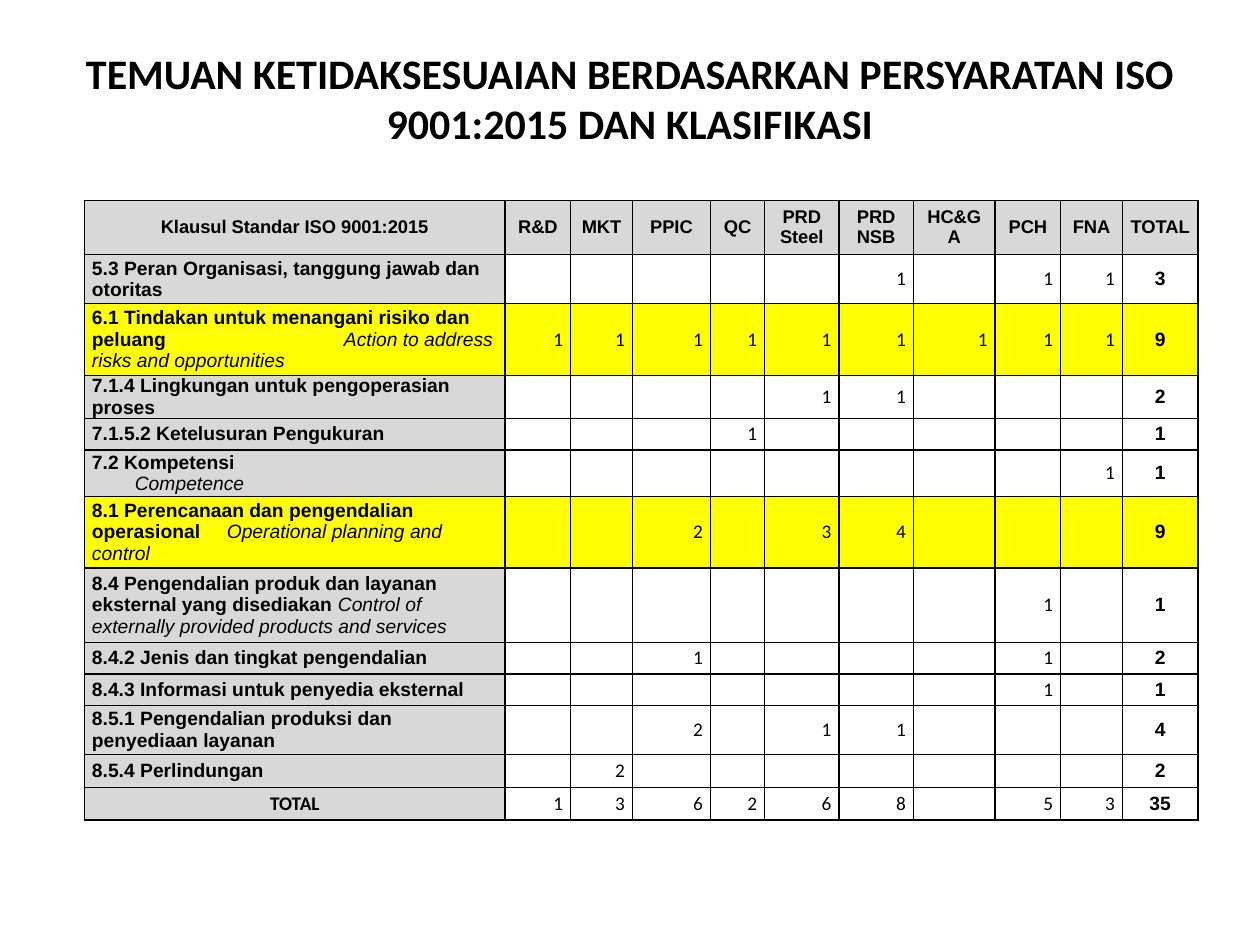
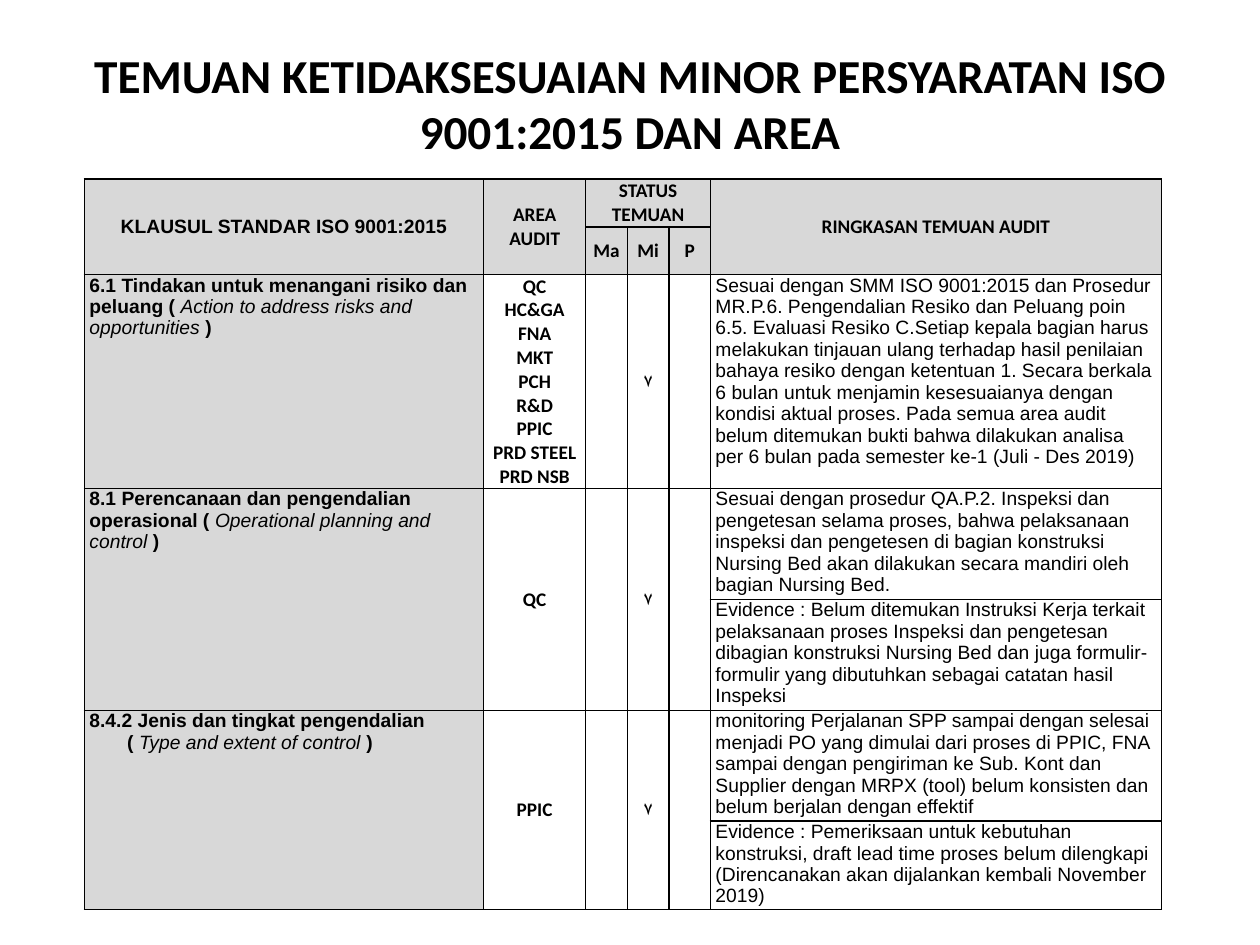
from dataclasses import dataclass
from lxml.etree import SubElement
from pptx import Presentation
from pptx.dml.color import RGBColor
from pptx.enum.text import MSO_ANCHOR, MSO_AUTO_SIZE, PP_ALIGN
from pptx.oxml.ns import qn
from pptx.util import Inches, Pt


@dataclass(frozen=True)
class Theme:
    ink: str = "000000"
    paper: str = "FFFFFF"
    label: str = "D8D8D8"
    highlight: str = "FFFF00"
    heading_font: str = "Calibri"
    body_font: str = "Arial"
    header_size: float = 10.5
    body_size: float = 11
    blank_size: float = 6
    line_width: float = 1
    plain_style: str = "{2D5ABB26-0587-4C30-8999-92F81FD0307C}"


@dataclass(frozen=True)
class Span:
    text: str
    bold: bool = False
    italic: bool = False


@dataclass(frozen=True)
class Line:
    spans: tuple
    indent: float = 0
    tab: float = 0


def bold(text):
    return Span(text, bold=True)


def italic(text):
    return Span(text, italic=True)


def line(*spans, indent=0, tab=0):
    return Line(spans, indent, tab)


class SlideBuilder:
    def __init__(self, deck, theme):
        self.deck = deck
        self.theme = theme
        self.slide = None

    def start(self):
        self.slide = self.deck.slides.add_slide(self.deck.slide_layouts[5])

    def add_spans(self, para, spans, size, font):
        for span in spans:
            run = para.add_run()
            run.text = span.text
            run.font.name = font
            run.font.size = Pt(size)
            run.font.bold = span.bold
            run.font.italic = span.italic
            run.font.color.rgb = RGBColor.from_string(self.theme.ink)

    def title(self, text, height, size):
        box = self.slide.shapes.title
        box.left, box.top = Inches(0.5), Inches(0.3)
        box.width, box.height = Inches(9), Inches(height)
        frame = box.text_frame
        frame.word_wrap = True
        frame.auto_size = MSO_AUTO_SIZE.NONE
        frame.vertical_anchor = MSO_ANCHOR.MIDDLE
        para = frame.paragraphs[0]
        para.alignment = PP_ALIGN.CENTER
        self.add_spans(para, [bold(text)], size, self.theme.heading_font)

    def table(self, left, top, widths, heights):
        frame = self.slide.shapes.add_table(
            len(heights), len(widths), Inches(left), Inches(top),
            Inches(sum(widths)), Inches(sum(heights)))
        table = frame.table
        table.first_row = table.horz_banding = False
        table._tbl.tblPr.find(qn("a:tableStyleId")).text = self.theme.plain_style
        for column, width in zip(table.columns, widths):
            column.width = Inches(width)
        for row, height in zip(table.rows, heights):
            row.height = Inches(height)
        for cell in table.iter_cells():
            cell.margin_left = cell.margin_right = 0
            cell.margin_top = cell.margin_bottom = 0
            cell.fill.background()
            SubElement(cell.text_frame.paragraphs[0]._p, qn("a:endParaRPr"),
                       sz=str(int(self.theme.blank_size * 100)))
        return table

    def paint(self, cell, fill, sides="LRTB"):
        properties = cell._tc.get_or_add_tcPr()
        cell.fill.solid()
        cell.fill.fore_color.rgb = RGBColor.from_string(fill)
        for position, side in enumerate(sides):
            border = SubElement(properties, qn(f"a:ln{side}"),
                                w=str(Pt(self.theme.line_width)))
            solid = SubElement(border, qn("a:solidFill"))
            SubElement(solid, qn("a:srgbClr"), val=self.theme.ink)
            properties.insert(position, border)

    def text(self, cell, lines, size=None, font=None, align=PP_ALIGN.LEFT,
             anchor=MSO_ANCHOR.MIDDLE, inset=0.06):
        cell.margin_left = cell.margin_right = Inches(inset)
        cell.vertical_anchor = anchor
        frame = cell.text_frame
        for index, item in enumerate(lines):
            para = frame.add_paragraph() if index else frame.paragraphs[0]
            para.alignment = align
            self.add_spans(para, item.spans, size or self.theme.body_size,
                           font or self.theme.body_font)
            properties = para._p.get_or_add_pPr()
            if item.indent:
                properties.set("marL", str(Inches(item.indent)))
                properties.set("indent", "0")
            if item.tab:
                stops = SubElement(properties, qn("a:tabLst"))
                SubElement(stops, qn("a:tab"), pos=str(Inches(item.tab)), algn="l")


DEPARTMENTS = ["R&D", "MKT", "PPIC", "QC", "PRD Steel", "PRD NSB",
               "HC&GA", "PCH", "FNA", "TOTAL"]

CLAUSES = [
    ([line(bold("5.3 Peran Organisasi, tanggung jawab dan otoritas"))],
     {"PRD NSB": 1, "PCH": 1, "FNA": 1, "TOTAL": 3}),
    ([line(bold("6.1 Tindakan untuk menangani risiko dan peluang\t"),
           italic("Action to address risks and opportunities"), tab=2)],
     dict.fromkeys(DEPARTMENTS, 1) | {"TOTAL": 9}),
    ([line(bold("7.1.4 Lingkungan untuk pengoperasian proses"))],
     {"PRD Steel": 1, "PRD NSB": 1, "TOTAL": 2}),
    ([line(bold("7.1.5.2 Ketelusuran Pengukuran"))], {"QC": 1, "TOTAL": 1}),
    ([line(bold("7.2 Kompetensi")), line(italic("Competence"), indent=0.34)],
     {"FNA": 1, "TOTAL": 1}),
    ([line(bold("8.1 Perencanaan dan pengendalian operasional\t"),
           italic("Operational planning and control"), tab=1.07)],
     {"PPIC": 2, "PRD Steel": 3, "PRD NSB": 4, "TOTAL": 9}),
    ([line(bold("8.4 Pengendalian produk dan layanan eksternal yang disediakan "),
           italic("Control of externally provided products and services"))],
     {"PCH": 1, "TOTAL": 1}),
    ([line(bold("8.4.2 Jenis dan tingkat pengendalian"))],
     {"PPIC": 1, "PCH": 1, "TOTAL": 2}),
    ([line(bold("8.4.3 Informasi untuk penyedia eksternal"))],
     {"PCH": 1, "TOTAL": 1}),
    ([line(bold("8.5.1 Pengendalian produksi dan penyediaan layanan"))],
     {"PPIC": 2, "PRD Steel": 1, "PRD NSB": 1, "TOTAL": 4}),
    ([line(bold("8.5.4 Perlindungan"))], {"MKT": 2, "TOTAL": 2}),
    ([line(bold("TOTAL"))],
     {"R&D": 1, "MKT": 3, "PPIC": 6, "QC": 2, "PRD Steel": 6, "PRD NSB": 8,
      "PCH": 5, "FNA": 3, "TOTAL": 35}),
]

FINDINGS = [
    ([line(bold("6.1 Tindakan untuk menangani risiko dan peluang ( "),
           italic("Action to address risks and opportunities"), bold(" )"))],
     ["QC", "HC&GA", "FNA", "MKT", "PCH", "R&D", "PPIC", "PRD STEEL", "PRD NSB"],
     ["Sesuai dengan SMM ISO 9001:2015 dan Prosedur MR.P.6. Pengendalian Resiko "
      "dan Peluang poin 6.5. Evaluasi Resiko C.Setiap kepala bagian harus melakukan "
      "tinjauan ulang terhadap hasil penilaian bahaya resiko dengan ketentuan 1. "
      "Secara berkala 6 bulan untuk menjamin kesesuaianya dengan kondisi aktual "
      "proses. Pada semua area audit belum ditemukan bukti bahwa dilakukan analisa "
      "per 6 bulan pada semester ke-1 (Juli - Des 2019)"]),
    ([line(bold("8.1 Perencanaan dan pengendalian operasional ( "),
           italic("Operational planning and control"), bold(" )"))],
     ["QC"],
     ["Sesuai dengan prosedur QA.P.2. Inspeksi dan pengetesan selama proses, bahwa "
      "pelaksanaan inspeksi dan pengetesen di bagian konstruksi Nursing Bed akan "
      "dilakukan secara mandiri oleh bagian Nursing Bed.",
      "Evidence : Belum ditemukan Instruksi Kerja terkait pelaksanaan proses Inspeksi "
      "dan pengetesan dibagian konstruksi Nursing Bed dan juga formulir-formulir yang "
      "dibutuhkan sebagai catatan hasil Inspeksi"]),
    ([line(bold("8.4.2 Jenis dan tingkat pengendalian")),
      line(bold("( "), italic("Type and extent of control"), bold(" )"), indent=0.3)],
     ["PPIC"],
     ["monitoring Perjalanan SPP sampai dengan selesai menjadi PO yang dimulai dari "
      "proses di PPIC, FNA sampai dengan pengiriman ke Sub. Kont dan Supplier dengan "
      "MRPX (tool) belum konsisten dan belum berjalan dengan effektif",
      "Evidence : Pemeriksaan untuk kebutuhan konstruksi, draft lead time proses belum "
      "dilengkapi (Direncanakan akan dijalankan kembali November 2019)"]),
]


def build_clause_slide(builder):
    theme = builder.theme
    builder.start()
    builder.title("TEMUAN KETIDAKSESUAIAN BERDASARKAN PERSYARATAN ISO 9001:2015 "
                  "DAN KLASIFIKASI", 0.95, 24)
    table = builder.table(
        0.67, 1.33,
        [0.44, 2.9, 0.52, 0.49, 0.62, 0.43, 0.59, 0.59, 0.65, 0.52, 0.49, 0.6],
        [0.26, 0.43, 0.39, 0.57, 0.34, 0.25, 0.37, 0.57, 0.59, 0.25, 0.25, 0.39,
         0.26, 0.26, 0.25])
    last_row = len(CLAUSES) + 1
    for row in range(1, last_row + 1):
        for column in range(12):
            fill = theme.label if row == 1 or column < 2 else theme.paper
            if row in (3, 7):
                fill = theme.highlight
            builder.paint(table.cell(row, column), fill)
        table.cell(row, 0).merge(table.cell(row, 1))

    headings = {0: "Klausul Standar ISO 9001:2015"} | dict(enumerate(DEPARTMENTS, 2))
    for column, heading in headings.items():
        builder.text(table.cell(1, column), [line(bold(heading))],
                     theme.header_size, align=PP_ALIGN.CENTER)
    for row, (clause, counts) in enumerate(CLAUSES, 2):
        is_total = row == last_row
        builder.text(table.cell(row, 0), clause,
                     font=theme.heading_font if is_total else theme.body_font,
                     align=PP_ALIGN.CENTER if is_total else PP_ALIGN.LEFT)
        for department, count in counts.items():
            cell = table.cell(row, DEPARTMENTS.index(department) + 2)
            if department == "TOTAL":
                builder.text(cell, [line(bold(str(count)))], align=PP_ALIGN.CENTER)
            else:
                builder.text(cell, [line(Span(str(count)))],
                             font=theme.heading_font, align=PP_ALIGN.RIGHT)


def build_finding_slide(builder):
    theme = builder.theme
    builder.start()
    builder.title("TEMUAN KETIDAKSESUAIAN MINOR PERSYARATAN ISO 9001:2015 DAN AREA",
                  1.03, 27)
    table = builder.table(0.67, 1.42, [3.05, 0.11, 0.81, 0.33, 0.33, 0.33, 3.58, 0.13],
                          [0.38, 0.38, 1.69, 0.88, 0.88, 0.88, 0.7, 0.12])
    open_sides = {3: "LRT", 4: "LRB", 5: "LRT", 6: "LRB"}
    for row in range(7):
        for column in range(7):
            fill = theme.label if row < 2 or column < 2 else theme.paper
            sides = open_sides.get(row, "LRTB") if column == 6 else "LRTB"
            builder.paint(table.cell(row, column), fill, sides)

    headings = [
        (0, 0, 1, 1, "KLAUSUL STANDAR ISO 9001:2015"), (0, 2, 1, 2, "AREA AUDIT"),
        (0, 3, 0, 5, "STATUS TEMUAN"), (0, 6, 1, 6, "RINGKASAN TEMUAN AUDIT"),
        (1, 3, 1, 3, "Ma"), (1, 4, 1, 4, "Mi"), (1, 5, 1, 5, "P")]
    for row, column, end_row, end_column, heading in headings:
        cell = table.cell(row, column)
        if (row, column) != (end_row, end_column):
            cell.merge(table.cell(end_row, end_column))
        builder.text(cell, [line(bold(heading))], align=PP_ALIGN.CENTER, inset=0.04,
                     font=theme.heading_font if column else theme.body_font)

    row = 2
    for clause, areas, summaries in FINDINGS:
        end_row = row + len(summaries) - 1
        table.cell(row, 0).merge(table.cell(end_row, 1))
        if end_row > row:
            for column in range(2, 6):
                table.cell(row, column).merge(table.cell(end_row, column))
        builder.text(table.cell(row, 0), clause, anchor=MSO_ANCHOR.TOP, inset=0.04)
        builder.text(table.cell(row, 2), [line(bold(area)) for area in areas],
                     font=theme.heading_font, align=PP_ALIGN.CENTER, inset=0.04)
        builder.text(table.cell(row, 4), [line(bold("۷"))],
                     align=PP_ALIGN.CENTER, inset=0.04)
        for offset, summary in enumerate(summaries):
            builder.text(table.cell(row + offset, 6), [line(Span(summary))],
                         anchor=MSO_ANCHOR.TOP, inset=0.04)
        row = end_row + 1


def main():
    deck = Presentation()
    deck.slide_width, deck.slide_height = Inches(10), Inches(7.5)
    builder = SlideBuilder(deck, Theme())
    build_clause_slide(builder)
    build_finding_slide(builder)
    deck.save("out.pptx")


if __name__ == "__main__":
    main()
